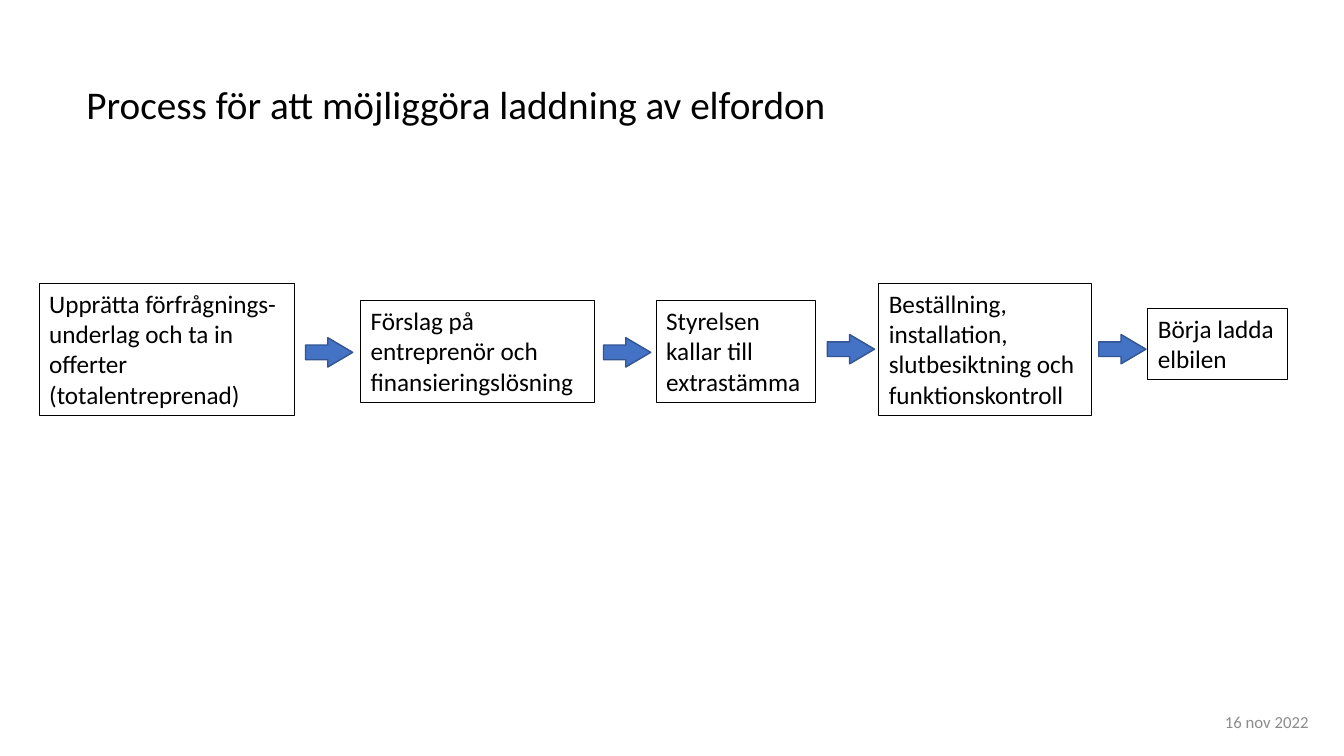
import pptx
import pptx.util
import pptx.dml.color
import pptx.enum.shapes
import pptx.enum.text

Cm = pptx.util.Cm
Pt = pptx.util.Pt
RGBColor = pptx.dml.color.RGBColor
Shape = pptx.enum.shapes.MSO_SHAPE
Anchor = pptx.enum.text.MSO_ANCHOR
Align = pptx.enum.text.PP_ALIGN
AutoSize = pptx.enum.text.MSO_AUTO_SIZE

BLACK = RGBColor(0x00, 0x00, 0x00)
GREY = RGBColor(0x8C, 0x8C, 0x8C)
ARROW_FILL = RGBColor(0x44, 0x72, 0xC4)
ARROW_LINE = RGBColor(0x32, 0x54, 0x91)


def write(box, lines, size, color, frame_format, para_format):
    frame = box.text_frame
    frame.word_wrap = True
    for name, value in frame_format.items():
        setattr(frame, name, value)
    for number, line in enumerate(lines):
        para = frame.add_paragraph() if number else frame.paragraphs[0]
        for name, value in para_format.items():
            setattr(para, name, value)
        span = para.add_run()
        span.text = line
        for name, value in {"name": "Calibri", "size": Pt(size)}.items():
            setattr(span.font, name, value)
        span.font.color.rgb = color


deck = pptx.Presentation()
deck.slide_width, deck.slide_height = Cm(33.87), Cm(19.05)
page = deck.slides.add_slide(deck.slide_layouts[6])

# Title
title = page.shapes.add_textbox(Cm(1.93), Cm(0.84), Cm(29.21), Cm(3.68))
write(title, ["Process för att möjliggöra laddning av elfordon"], 28, BLACK,
      {"vertical_anchor": Anchor.MIDDLE}, {"line_spacing": 0.9})

# Process steps: left, top, width, height, lines
steps = [
    (0.99, 7.14, 6.43, 3.33, ["Upprätta förfrågnings-underlag och ta in offerter",
                              "(totalentreprenad)"]),
    (9.09, 7.57, 5.89, 2.57, ["Förslag på entreprenör och finansieringslösning"]),
    (16.54, 7.57, 4.01, 2.57, ["Styrelsen kallar till extrastämma"]),
    (22.15, 7.14, 5.36, 3.33, ["Beställning, installation, slutbesiktning och funktionskontroll"]),
    (28.93, 7.77, 3.53, 1.8, ["Börja ladda elbilen"]),
]
for left, top, width, height, lines in steps:
    step = page.shapes.add_shape(Shape.RECTANGLE, Cm(left), Cm(top), Cm(width), Cm(height))
    step.shadow.inherit = False
    step.fill.background()
    step.line.color.rgb = BLACK
    step.line.width = Pt(0.75)
    write(step, lines, 18, BLACK,
          {"vertical_anchor": Anchor.TOP, "auto_size": AutoSize.SHAPE_TO_FIT_TEXT},
          {"alignment": Align.LEFT})

# Arrows between the steps
for left, top in [(7.7, 8.51), (15.21, 8.51), (20.85, 8.43), (27.69, 8.43)]:
    arrow = page.shapes.add_shape(Shape.RIGHT_ARROW, Cm(left), Cm(top), Cm(1.19), Cm(0.74))
    arrow.shadow.inherit = False
    arrow.adjustments[1] = 0.85
    arrow.fill.solid()
    arrow.fill.fore_color.rgb = ARROW_FILL
    arrow.line.color.rgb = ARROW_LINE
    arrow.line.width = Pt(1)

# Date
date = page.shapes.add_textbox(Cm(24.31), Cm(17.7), Cm(8.92), Cm(0.97))
write(date, ["16 nov 2022"], 12, GREY,
      {"vertical_anchor": Anchor.MIDDLE}, {"alignment": Align.RIGHT})

deck.save("out.pptx")
